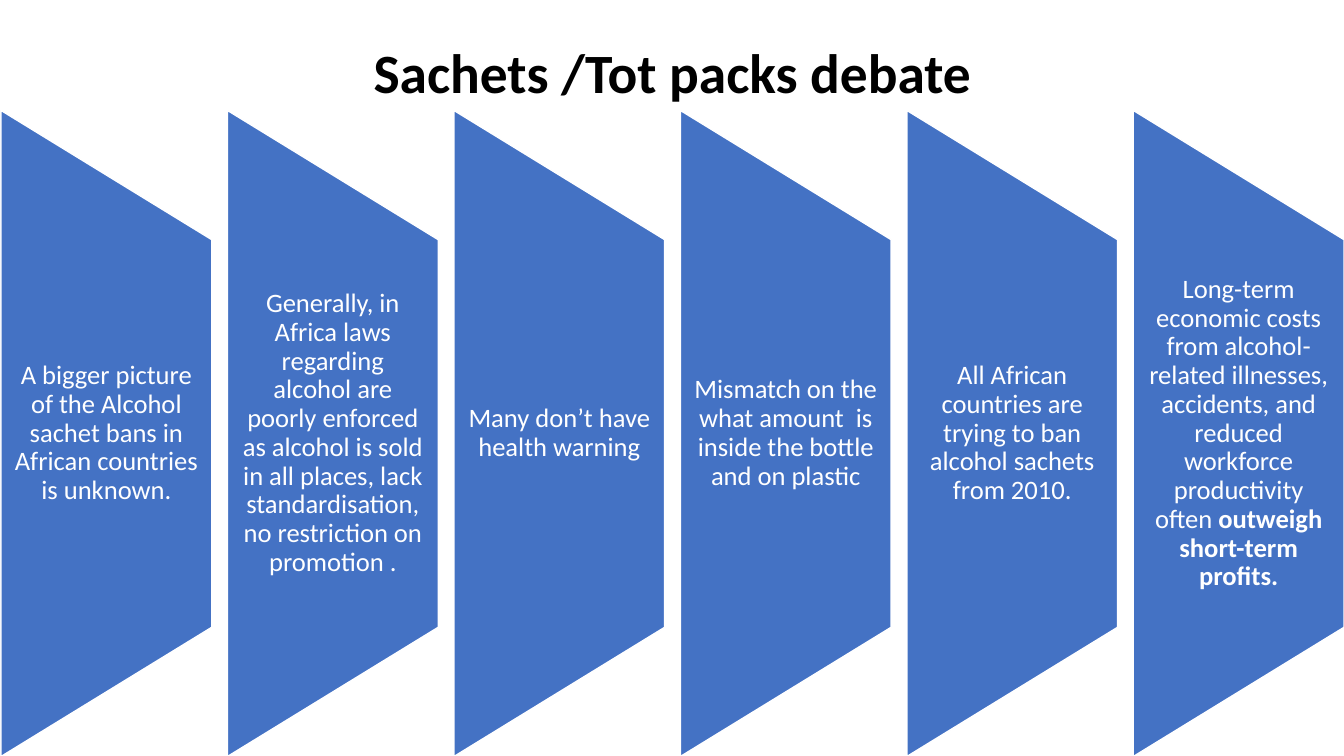
from dataclasses import dataclass

from pptx import Presentation
from pptx.dml.color import RGBColor
from pptx.enum.shapes import MSO_SHAPE
from pptx.enum.text import MSO_ANCHOR, PP_ALIGN
from pptx.util import Inches, Pt

TITLE = "Sachets /Tot packs debate"
POINTS = [
    [("A bigger picture of the Alcohol sachet bans in African countries is unknown.", False)],
    [("Generally, in Africa laws regarding alcohol are poorly enforced as alcohol is sold "
      "in all places, lack standardisation, no restriction on promotion .", False)],
    [("Many don’t have health warning", False)],
    [("Mismatch on the what amount  is inside the bottle and on plastic", False)],
    [("All African countries are trying to ban alcohol sachets from 2010.", False)],
    [("Long-term economic costs from alcohol-related illnesses, accidents, and reduced "
      "workforce productivity often ", False),
     ("outweigh short-term profits.", True)],
]

PANEL = MSO_SHAPE.FLOWCHART_MANUAL_OPERATION
MIDDLE = MSO_ANCHOR.MIDDLE
CENTER = PP_ALIGN.CENTER


@dataclass(frozen=True)
class Theme:
    font: str = "Calibri"
    title_size: float = 39.6
    body_size: float = 19
    black: RGBColor = RGBColor(0x00, 0x00, 0x00)
    white: RGBColor = RGBColor(0xFF, 0xFF, 0xFF)
    blue: RGBColor = RGBColor(0x44, 0x72, 0xC4)


THEME = Theme()
PAGE_WIDTH, PAGE_HEIGHT = 13.33, 7.5
PANEL_WIDTH, PANEL_HEIGHT = 2.09, 6.41
TEXT_HEIGHT = 3.85
FIRST_LEFT = 0.01
MIDDLE_Y = 4.3
STEP = (PAGE_WIDTH - PANEL_WIDTH - FIRST_LEFT) / (len(POINTS) - 1)


def style_run(span, size, color, bold):
    span.font.name = THEME.font
    span.font.size = Pt(size)
    span.font.color.rgb = color
    span.font.bold = bold


def add_title(page):
    title = page.shapes.title
    title.left, title.top = Inches(0.92), Inches(0.4)
    title.width, title.height = Inches(11.5), Inches(0.69)
    frame = title.text_frame
    frame.text = TITLE
    frame.vertical_anchor = MIDDLE
    para = frame.paragraphs[0]
    para.alignment = CENTER
    para.line_spacing = 0.9
    style_run(para.runs[0], THEME.title_size, THEME.black, True)


def add_panel(page, left):
    center_x = left + PANEL_WIDTH / 2
    panel = page.shapes.add_shape(
        PANEL, Inches(center_x - PANEL_HEIGHT / 2), Inches(MIDDLE_Y - PANEL_WIDTH / 2),
        Inches(PANEL_HEIGHT), Inches(PANEL_WIDTH))
    panel.rotation = 270
    panel.shadow.inherit = False
    panel.fill.solid()
    panel.fill.fore_color.rgb = THEME.blue
    panel.line.color.rgb = THEME.white
    panel.line.width = Pt(1)


def add_point(page, left, spans):
    box = page.shapes.add_textbox(
        Inches(left), Inches(MIDDLE_Y - TEXT_HEIGHT / 2),
        Inches(PANEL_WIDTH), Inches(TEXT_HEIGHT))
    frame = box.text_frame
    frame.word_wrap = True
    frame.vertical_anchor = MIDDLE
    frame.margin_left = frame.margin_right = Inches(0.13)
    frame.margin_top = frame.margin_bottom = 0
    para = frame.paragraphs[0]
    para.alignment = CENTER
    para.line_spacing = 0.9
    for text, bold in spans:
        span = para.add_run()
        span.text = text
        style_run(span, THEME.body_size, THEME.white, bold)


def main():
    deck = Presentation()
    deck.slide_width, deck.slide_height = Inches(PAGE_WIDTH), Inches(PAGE_HEIGHT)
    page = deck.slides.add_slide(deck.slide_layouts[5])
    add_title(page)
    for index, spans in enumerate(POINTS):
        left = FIRST_LEFT + index * STEP
        add_panel(page, left)
        add_point(page, left, spans)
    deck.save("out.pptx")


if __name__ == "__main__":
    main()
